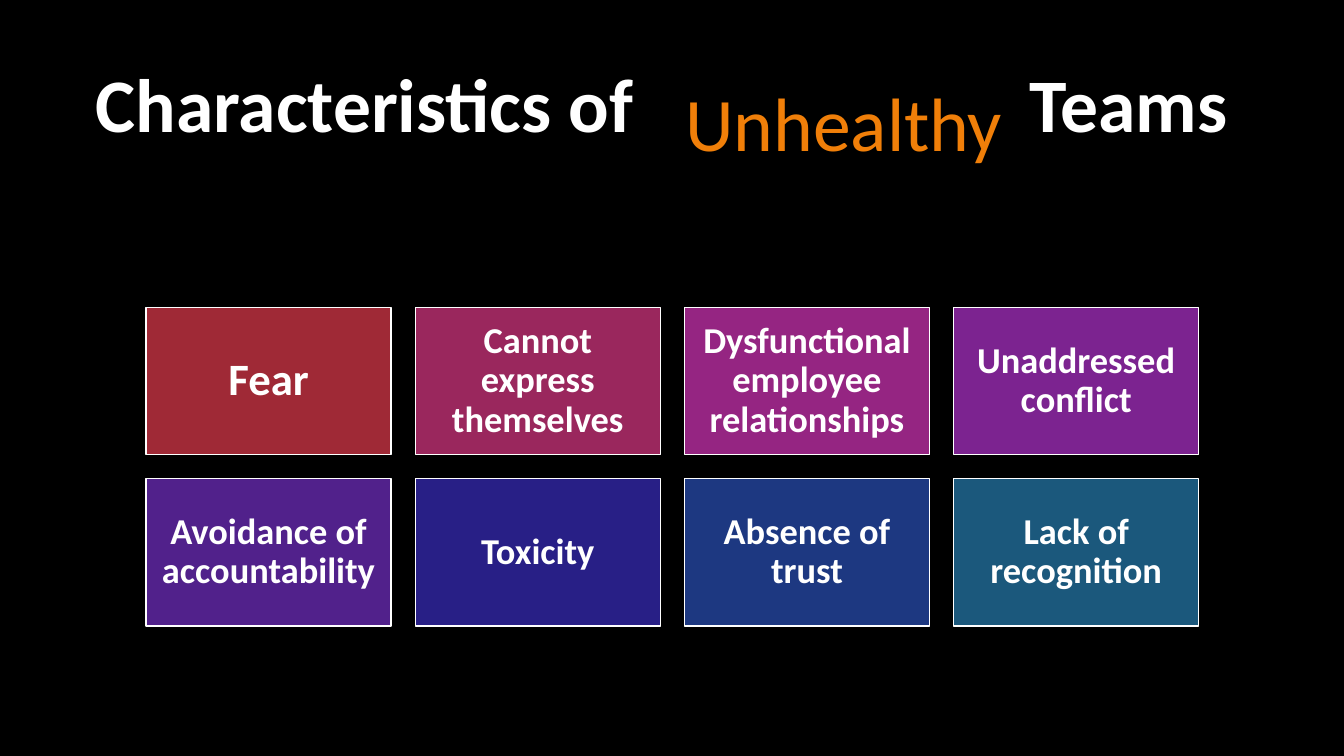
from pptx import Presentation
from pptx.dml.color import RGBColor
from pptx.enum.shapes import MSO_SHAPE
from pptx.enum.text import MSO_ANCHOR, PP_ALIGN
from pptx.util import Inches, Pt

RECTANGLE = MSO_SHAPE.RECTANGLE
TOP, MIDDLE = MSO_ANCHOR.TOP, MSO_ANCHOR.MIDDLE
LEFT, CENTER = PP_ALIGN.LEFT, PP_ALIGN.CENTER
FONT = "Calibri"
WHITE, BLACK, ORANGE = "FFFFFF", "000000", "F07F09"
BLANK_LAYOUT = 6

TRAITS = [
    ("Fear", "9F2936", 32),
    ("Cannot express themselves", "9A275D", 26),
    ("Dysfunctional employee relationships", "952582", 26),
    ("Unaddressed conflict", "7C2390", 26),
    ("Avoidance of accountability", "51218B", 26),
    ("Toxicity", "281F86", 26),
    ("Absence of trust", "1D3881", 26),
    ("Lack of recognition", "1B587C", 26),
]


def color(hex_string):
    return RGBColor.from_string(hex_string)


def write(shape, text, size, hex_color=WHITE, bold=True, align=CENTER,
          anchor=MIDDLE, spacing=0.9, inset=0.11):
    frame = shape.text_frame
    frame.vertical_anchor = anchor
    frame.margin_left = frame.margin_right = Inches(inset)
    frame.margin_top = frame.margin_bottom = Inches(inset)
    paragraph = frame.paragraphs[0]
    paragraph.text = text
    paragraph.alignment = align
    paragraph.line_spacing = spacing
    paragraph.font.name = FONT
    paragraph.font.size = Pt(size)
    paragraph.font.bold = bold
    paragraph.font.color.rgb = color(hex_color)
    frame.word_wrap = True


def add_title(slide, left, top, height):
    def add_words(offset, drop, width, box_height):
        return slide.shapes.add_textbox(
            Inches(left + offset), Inches(top + drop),
            Inches(width), Inches(box_height))

    write(add_words(0, 0, 5.7, height), "Characteristics of", 54,
          align=LEFT, inset=0)
    write(add_words(9.26, 0, 2.4, height), "Teams", 54, align=LEFT, inset=0)
    write(add_words(5.72, 0.35, 3.4, 1.02), "Unhealthy", 54, ORANGE,
          bold=False, anchor=TOP, spacing=1.0, inset=0.05)


def add_trait_grid(slide, left, top, width, height, columns=4, gap=0.24):
    rows = len(TRAITS) // columns
    tile_width = (width - gap * (columns - 1)) / columns
    tile_height = (height - gap * (rows - 1)) / rows
    for index, (trait, fill, size) in enumerate(TRAITS):
        row, column = divmod(index, columns)
        tile = slide.shapes.add_shape(
            RECTANGLE,
            Inches(left + column * (tile_width + gap)),
            Inches(top + row * (tile_height + gap)),
            Inches(tile_width), Inches(tile_height))
        tile.shadow.inherit = False
        tile.fill.solid()
        tile.fill.fore_color.rgb = color(fill)
        tile.line.color.rgb = color(WHITE)
        tile.line.width = Pt(1)
        write(tile, trait, size)


def main():
    presentation = Presentation()
    presentation.slide_width = Inches(13.33)
    presentation.slide_height = Inches(7.5)
    slide = presentation.slides.add_slide(
        presentation.slide_layouts[BLANK_LAYOUT])
    slide.background.fill.solid()
    slide.background.fill.fore_color.rgb = color(BLACK)
    add_title(slide, 0.95, 0.35, 1.45)
    add_trait_grid(slide, 1.45, 3.05, 10.44, 3.16)
    presentation.save("out.pptx")


if __name__ == "__main__":
    main()
